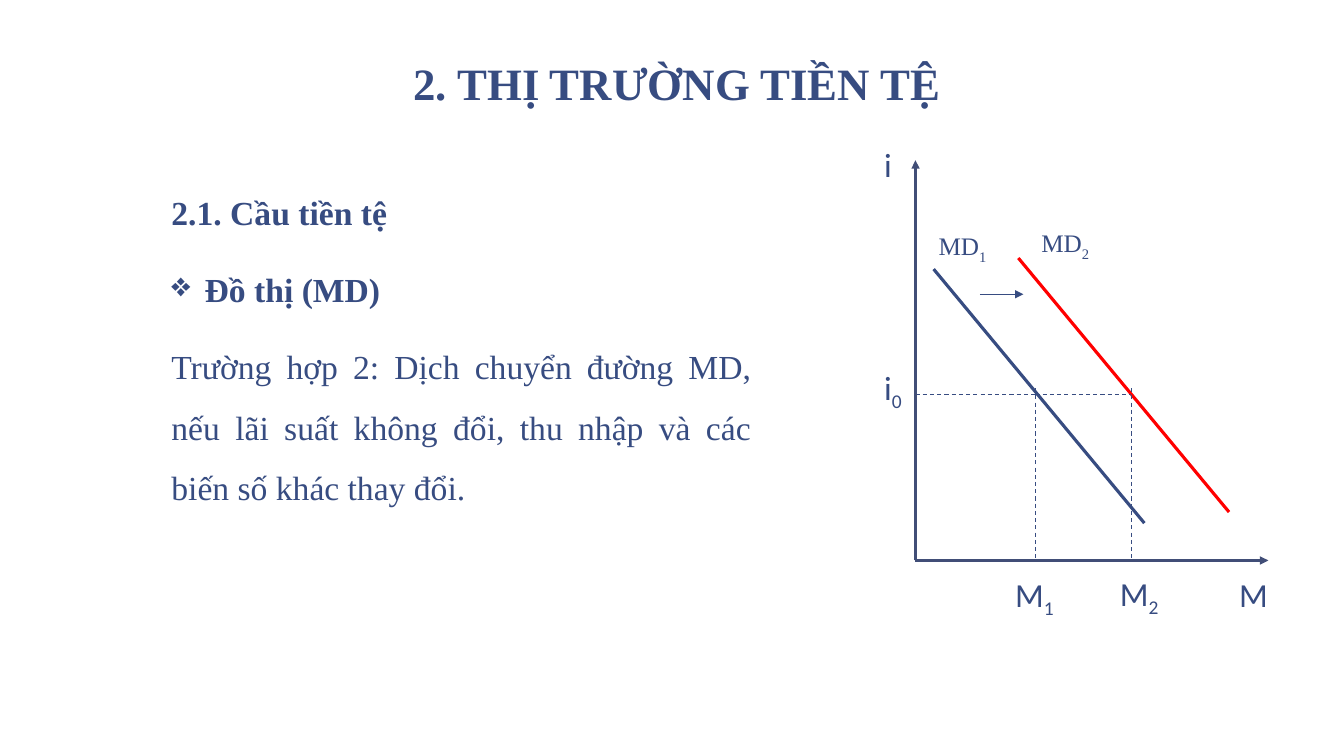
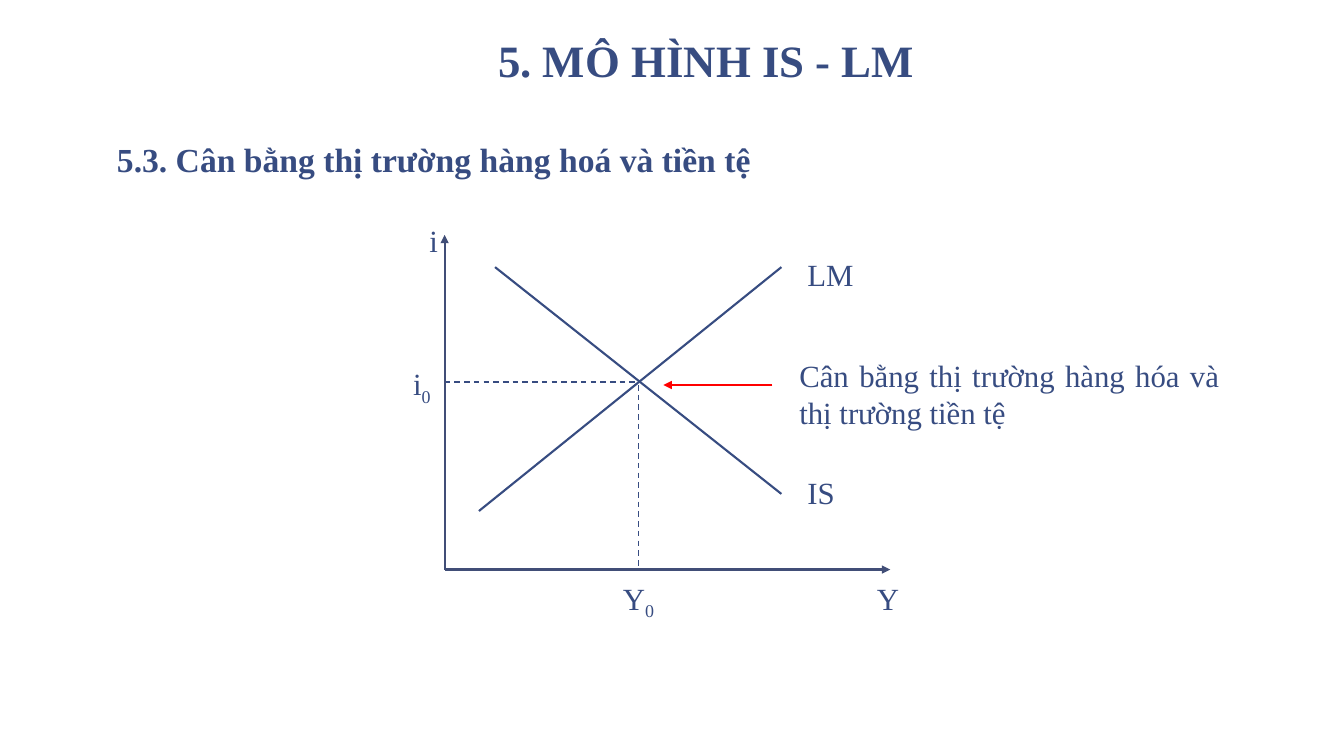
from lxml.etree import SubElement
from pptx import Presentation
from pptx.dml.color import RGBColor
from pptx.enum.dml import MSO_LINE
from pptx.enum.shapes import MSO_CONNECTOR
from pptx.enum.text import MSO_ANCHOR, PP_ALIGN
from pptx.oxml.ns import qn
from pptx.util import Inches, Pt

# Shared look
BLUE, DARK, RED = "374C81", "414E77", "FF0000"
SERIF, SANS = "Times New Roman", "Calibri"
WIDE = (0.13, 0.07)
SLIM = (0.1, 0.05)
HEAD = {"name": SERIF, "size": Pt(32), "bold": True}
BOLD = {"name": SERIF, "size": Pt(24), "bold": True}
BODY = {"name": SERIF, "size": Pt(24), "bold": False}
AXIS = {"name": SANS, "size": Pt(24)}
CURVE = {"name": SERIF, "size": Pt(18)}
MARK = {"name": SERIF, "size": Pt(22)}
CENTER = {"alignment": PP_ALIGN.CENTER, "line_spacing": 0.85}
FLOW = {"alignment": PP_ALIGN.JUSTIFY, "line_spacing": 1.5}


def color(code):
    return RGBColor.from_string(code)


def apply(item, form):
    for key, value in form.items():
        setattr(item, key, value)


# Text
def add_box(slide, area, pad=SLIM, anchor=MSO_ANCHOR.TOP):
    frame = slide.shapes.add_textbox(*map(Inches, area)).text_frame
    side, edge = map(Inches, pad)
    apply(frame, {"word_wrap": True, "vertical_anchor": anchor,
                  "margin_left": side, "margin_right": side,
                  "margin_top": edge, "margin_bottom": edge})
    return frame


def add_run(para, text, font, sub=False):
    run = para.add_run()
    run.text = text
    apply(run.font, font)
    run.font.color.rgb = color(BLUE)
    if sub:
        run._r.get_or_add_rPr().set("baseline", "-25000")


def add_bullet(para, sign, indent):
    props = para._p.get_or_add_pPr()
    props.set("marL", str(Inches(indent)))
    props.set("indent", str(-Inches(indent)))
    SubElement(props, qn("a:buChar")).set("char", sign)


def add_title(slide, area, text):
    para = add_box(slide, area, WIDE, MSO_ANCHOR.BOTTOM).paragraphs[0]
    apply(para, CENTER)
    add_run(para, text, HEAD)


def add_body(slide, area, rows):
    frame = add_box(slide, area, WIDE)
    for num, (text, font, sign) in enumerate(rows):
        para = frame.add_paragraph() if num else frame.paragraphs[0]
        if sign:
            add_bullet(para, sign, 0.33)
        apply(para, FLOW)
        if num:
            para.space_before = Pt(12)
        add_run(para, text, font)


def add_label(slide, area, font, text, sub=""):
    para = add_box(slide, area).paragraphs[0]
    add_run(para, text, font)
    if sub:
        add_run(para, sub, font, True)
    return para


# Lines
def add_line(slide, start, end, width, code=BLUE, dash=False, arrow=False):
    line = slide.shapes.add_connector(
        MSO_CONNECTOR.STRAIGHT, *map(Inches, (*start, *end)))
    line.line.width = Pt(width)
    line.line.color.rgb = color(code)
    if dash:
        line.line.dash_style = MSO_LINE.DASH
    if arrow:
        SubElement(line.line._get_or_add_ln(), qn("a:tailEnd")).set(
            "type", "triangle")
    SubElement(line._element.spPr, qn("a:effectLst"))


def add_axes(slide, left, base, right, top, width):
    for end in ((left, top), (right, base)):
        add_line(slide, (left, base), end, width, DARK, arrow=True)


# Slides
def money_slide(slide):
    add_title(slide, (1.16, 0.49, 11.11, 0.67), "2. THỊ TRƯỜNG TIỀN TỆ")
    add_body(slide, (1.57, 1.63, 6.01, 4.55), [
        ("2.1. Cầu tiền tệ", BOLD, ""),
        ("Đồ thị (MD)", BOLD, "❖"),
        ("Trường hợp 2: Dịch chuyển đường MD, nếu lãi suất không đổi, "
         "thu nhập và các biến số khác thay đổi.", BODY, ""),
    ])

    # Demand curves and their guides
    left, base, rate = 9.08, 5.56, 3.91
    prev = left
    for x, y, code, stop in ((9.26, 2.67, BLUE, 10.27),
                             (10.1, 2.56, RED, 11.22)):
        add_line(slide, (x, y), (x + 2.09, y + 2.52), 2.25, code)
        add_line(slide, (prev, rate), (stop, rate), 0.75, dash=True)
        add_line(slide, (stop, 3.85), (stop, base), 0.75, dash=True)
        prev = stop
    add_axes(slide, left, base, 12.58, 1.59, 2)
    add_line(slide, (9.72, 2.92), (10.15, 2.92), 1, arrow=True)

    for x, y, font, *text in (
            (8.67, 1.38, AXIS, "i"), (8.67, 3.59, AXIS, "i", "0"),
            (9.97, 5.64, AXIS, "M", "1"), (11.01, 5.63, AXIS, "M", "2"),
            (12.19, 5.64, AXIS, "M"),
            (9.21, 2.24, CURVE, "MD", "1"), (10.23, 2.21, CURVE, "MD", "2")):
        add_label(slide, (x, y, 0.92, 0.5), font, *text)


def model_slide(slide):
    add_title(slide, (1.24, -0.07, 11.53, 1), "5. MÔ HÌNH IS - LM")
    add_body(slide, (1.03, 1.11, 10.55, 0.8), [
        ("5.3. Cân bằng thị trường hàng hoá và tiền tệ", BOLD, "")])

    # Curves, guides and axes
    left, base, rate, out = 4.41, 5.65, 3.79, 6.33
    add_line(slide, (4.91, 2.65), (7.75, 4.9), 1.5)
    add_line(slide, (4.75, 5.07), (7.75, 2.65), 1.5)
    add_line(slide, (left, rate), (out, rate), 1, dash=True)
    add_line(slide, (out, 3.82), (out, base), 1, dash=True)
    add_line(slide, (7.66, 3.82), (6.58, 3.82), 1, RED, arrow=True)
    add_axes(slide, left, base, 8.83, 2.33, 1.5)

    for x, y, *text in (
            (4.16, 2.15, "i"), (4, 3.57, "i", "0"),
            (7.91, 2.49, "LM"), (7.91, 4.65, "IS"),
            (6.08, 5.7, "Y", "0"), (8.6, 5.7, "Y")):
        add_label(slide, (x, y, 0.67, 0.47), MARK, *text)
    note = add_label(slide, (7.83, 3.49, 4.36, 0.84), MARK,
                     "Cân bằng thị trường hàng hóa và thị trường tiền tệ")
    note.alignment = PP_ALIGN.JUSTIFY


def main():
    deck = Presentation()
    deck.slide_width, deck.slide_height = Inches(13.33), Inches(7.5)
    for build in (money_slide, model_slide):
        build(deck.slides.add_slide(deck.slide_layouts[6]))
    deck.save("out.pptx")


if __name__ == "__main__":
    main()
